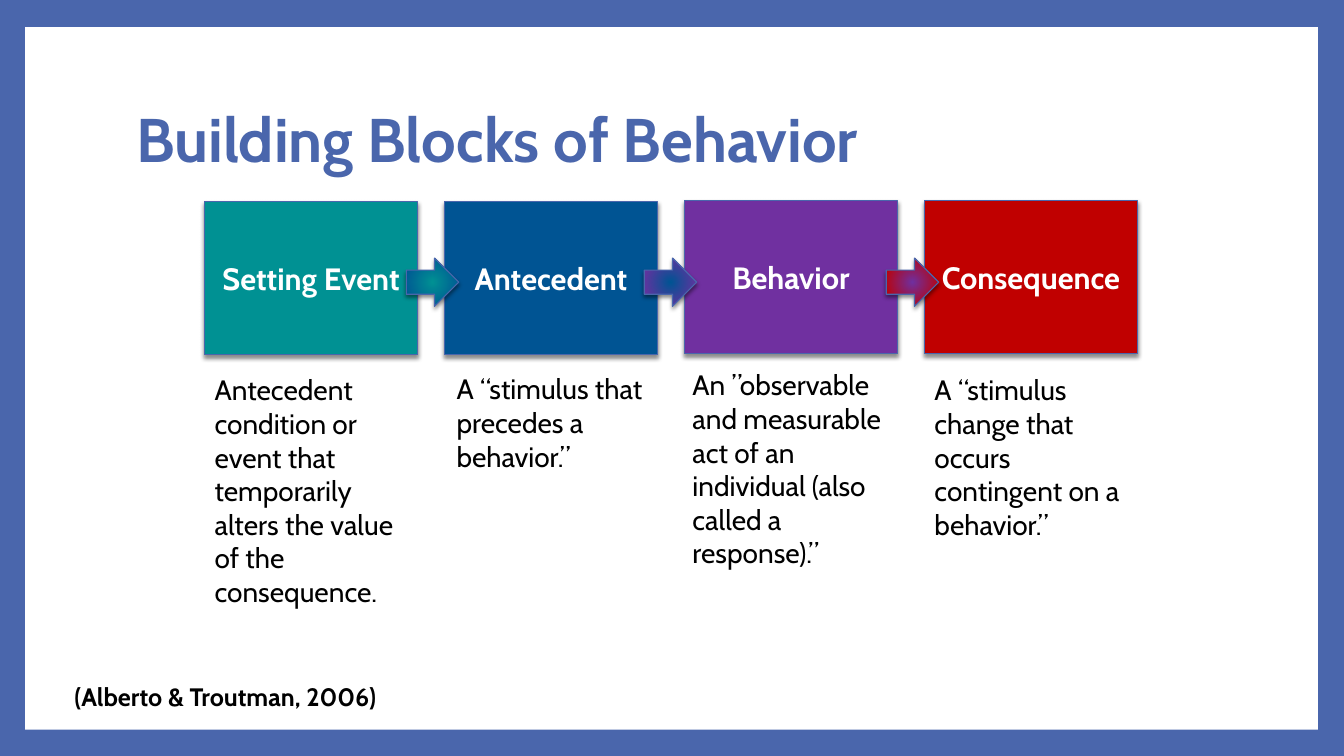
from lxml import etree
from pptx import Presentation
from pptx.dml.color import RGBColor
from pptx.enum.shapes import MSO_SHAPE
from pptx.enum.text import MSO_ANCHOR, MSO_AUTO_SIZE, PP_ALIGN
from pptx.oxml import parse_xml
from pptx.oxml.ns import nsdecls, qn
from pptx.util import Inches, Pt

RECTANGLE, RIGHT_ARROW = MSO_SHAPE.RECTANGLE, MSO_SHAPE.RIGHT_ARROW
MIDDLE, TOP = MSO_ANCHOR.MIDDLE, MSO_ANCHOR.TOP
CENTER, LEFT = PP_ALIGN.CENTER, PP_ALIGN.LEFT
GROW, FIXED = MSO_AUTO_SIZE.SHAPE_TO_FIT_TEXT, MSO_AUTO_SIZE.NONE

FONT = "Cabin"
FRAME_BLUE, WHITE, BLACK = "4A66AC", "FFFFFF", "000000"
FIRST_LEFT, STEP = 2.03, 2.38

STAGES = [
    ("Setting Event", "009193", 2.0, 2.03, 3.65, 2.46,
     "Antecedent condition or event that temporarily alters the value of the consequence."),
    ("Antecedent", "005493", 2.0, 4.43, 3.64, 1.11,
     "A “stimulus that precedes a behavior.”"),
    ("Behavior", "7030A0", 1.99, 6.77, 3.6, 2.12,
     "An ”observable and measurable act of an individual (also called a response).”"),
    ("Consequence", "C00000", 1.99, 9.17, 3.65, 1.78,
     "A “stimulus change that occurs contingent on a behavior.”"),
]
ARROW_LEFTS = [4.03, 6.39, 8.79]


def paint(color_format, hex_color):
    color_format.rgb = RGBColor.from_string(hex_color)


def fill_solid(fill, hex_color):
    fill.solid()
    paint(fill.fore_color, hex_color)


def write(frame, text, size, color, bold=False, align=LEFT, anchor=TOP):
    frame.text = text
    frame.word_wrap = True
    frame.vertical_anchor = anchor
    paragraph = frame.paragraphs[0]
    paragraph.alignment = align
    font = paragraph.runs[0].font
    font.name, font.size, font.bold = FONT, Pt(size), bold
    paint(font.color, color)


def add_figure(slide, preset, left, top, width, height):
    figure = slide.shapes.add_shape(
        preset, Inches(left), Inches(top), Inches(width), Inches(height))
    figure.shadow.inherit = False
    return figure


def outline_and_shade(figure):
    paint(figure.line.color, FRAME_BLUE)
    figure.line.width = Pt(0.79)
    effects = figure._element.spPr.find(qn("a:effectLst"))
    effects.append(parse_xml(
        f'<a:outerShdw {nsdecls("a")} blurRad="{Pt(3)}" dist="{Pt(2)}" dir="5400000" '
        'rotWithShape="0"><a:srgbClr val="000000"><a:alpha val="45000"/></a:srgbClr>'
        '</a:outerShdw>'))


def add_panel(slide):
    panel = add_figure(slide, RECTANGLE, 0.25, 0.27, 12.82, 6.97)
    fill_solid(panel.fill, WHITE)
    panel.line.fill.background()


def add_title(slide, text):
    title = slide.shapes.title
    title.left, title.top = Inches(1.25), Inches(0.67)
    title.width, title.height = Inches(10.8), Inches(1.48)
    write(title.text_frame, text, 44, FRAME_BLUE, True, LEFT, MIDDLE)
    title.text_frame.auto_size = FIXED
    title.text_frame.paragraphs[0].line_spacing = 0.9


def add_block(slide, label, color, left, top):
    block = add_figure(slide, RECTANGLE, left, top, 2.11, 1.52)
    fill_solid(block.fill, color)
    outline_and_shade(block)
    write(block.text_frame, label, 22, WHITE, True, CENTER, MIDDLE)


def add_arrow(slide, left, inner, outer):
    arrow = add_figure(slide, RIGHT_ARROW, left, 2.56, 0.52, 0.48)
    arrow.fill.gradient()
    for stop, color, position in zip(arrow.fill.gradient_stops, (inner, outer), (0, 0.86)):
        paint(stop.color, color)
        stop.position = position
    gradient = arrow._element.spPr.find(qn("a:gradFill"))
    gradient.remove(gradient.find(qn("a:lin")))
    radial = etree.SubElement(gradient, qn("a:path"), {"path": "circle"})
    etree.SubElement(radial, qn("a:fillToRect"), dict.fromkeys("ltrb", "50000"))
    outline_and_shade(arrow)


def add_note(slide, text, left, top, width, height, size=20, bold=False):
    note = slide.shapes.add_textbox(
        Inches(left), Inches(top), Inches(width), Inches(height))
    write(note.text_frame, text, size, BLACK, bold)
    note.text_frame.auto_size = GROW


def main():
    deck = Presentation()
    deck.slide_width, deck.slide_height = Inches(13.33), Inches(7.5)
    slide = deck.slides.add_slide(deck.slide_layouts[5])
    fill_solid(slide.background.fill, FRAME_BLUE)

    add_panel(slide)
    title_element = slide.shapes.title._element
    title_element.getparent().append(title_element)
    add_title(slide, "Building Blocks of Behavior")

    for index, (label, color, top, *_) in enumerate(STAGES):
        add_block(slide, label, color, FIRST_LEFT + index * STEP, top)
    for left, before, after in zip(ARROW_LEFTS, STAGES, STAGES[1:]):
        add_arrow(slide, left, before[1], after[1])
    for _, _, _, left, top, height, definition in STAGES:
        add_note(slide, definition, left, top, 2.13, height)
    add_note(slide, "(Alberto & Troutman, 2006)", 0.64, 6.71, 8.67, 0.4, 18, True)

    deck.save("out.pptx")


if __name__ == "__main__":
    main()
